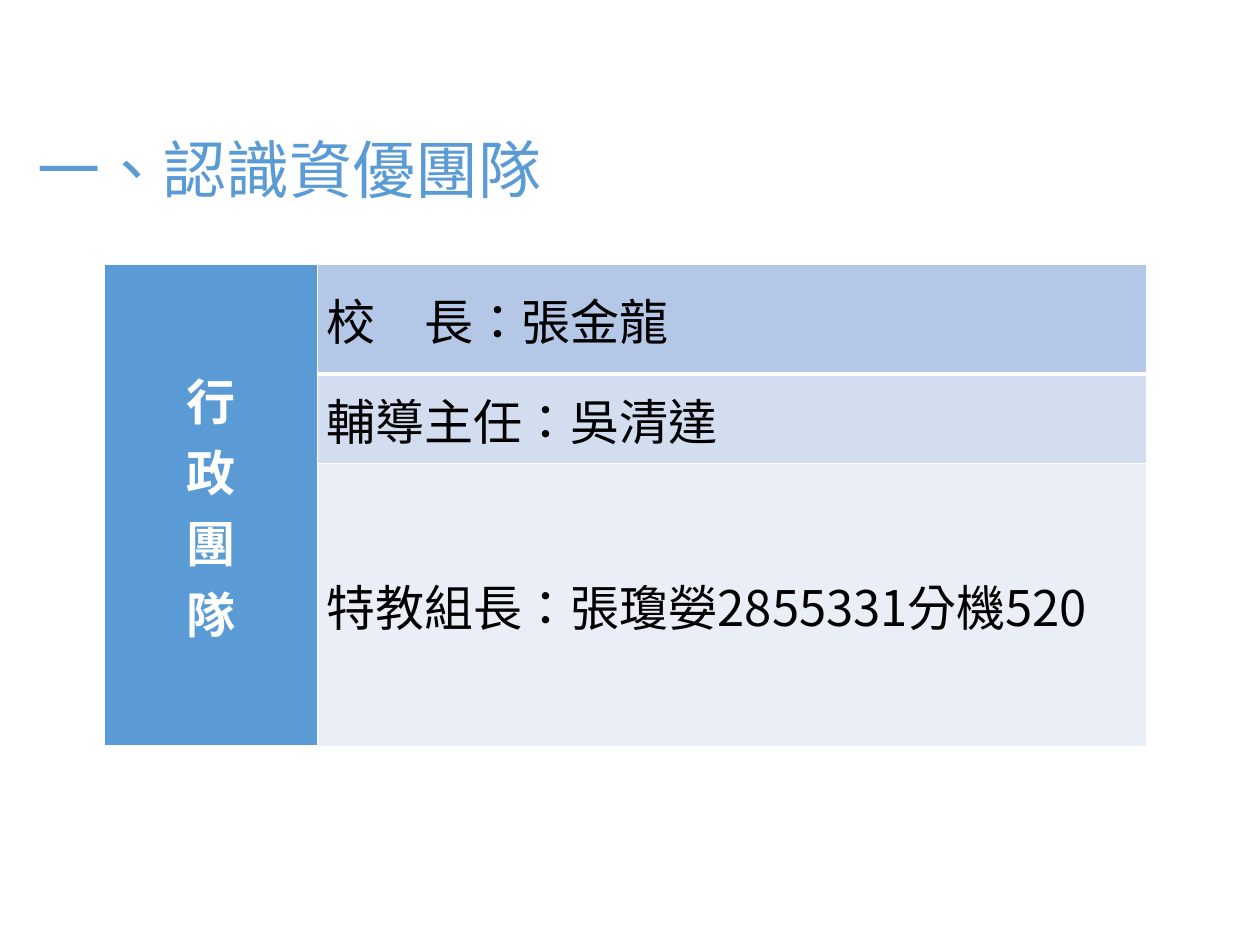
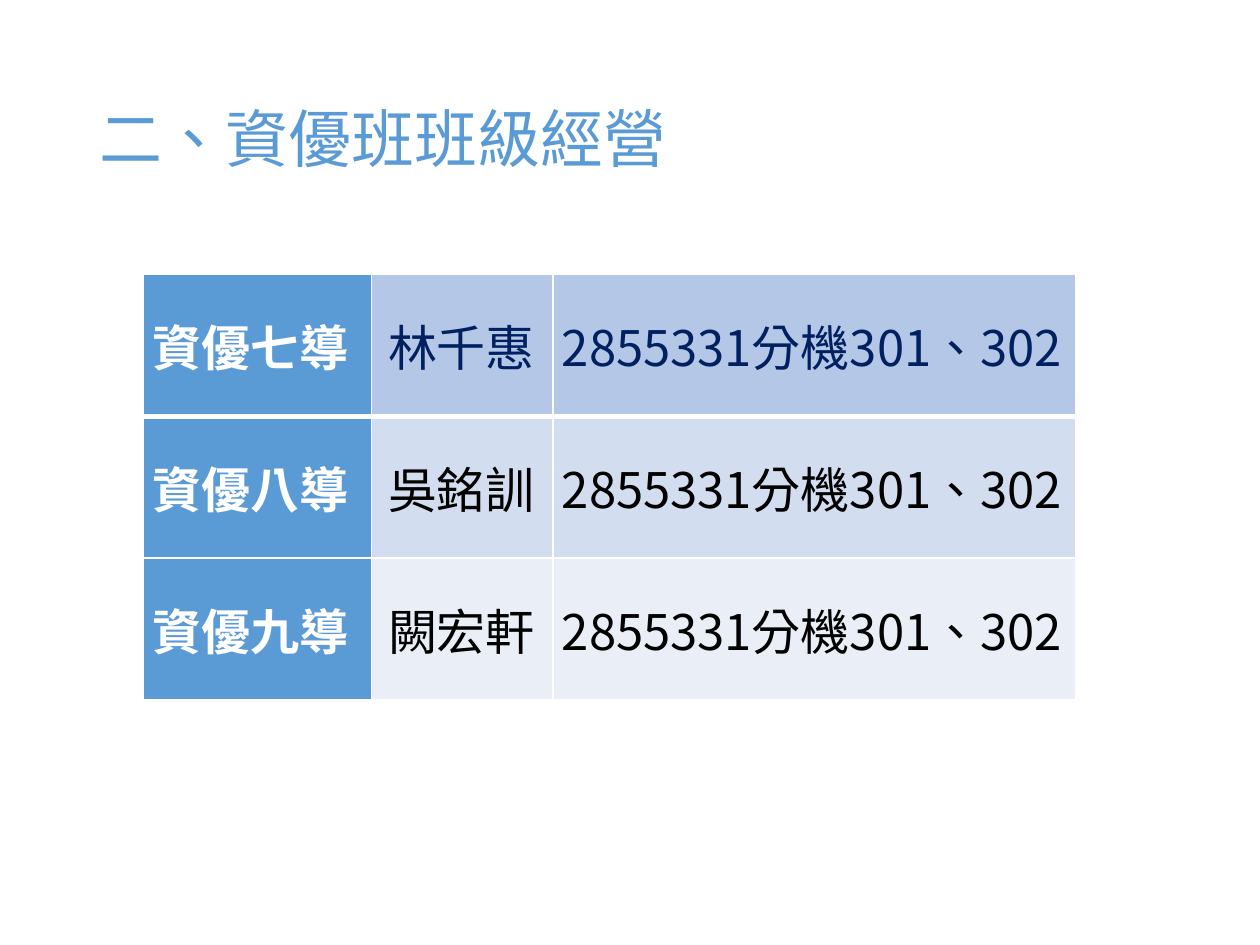
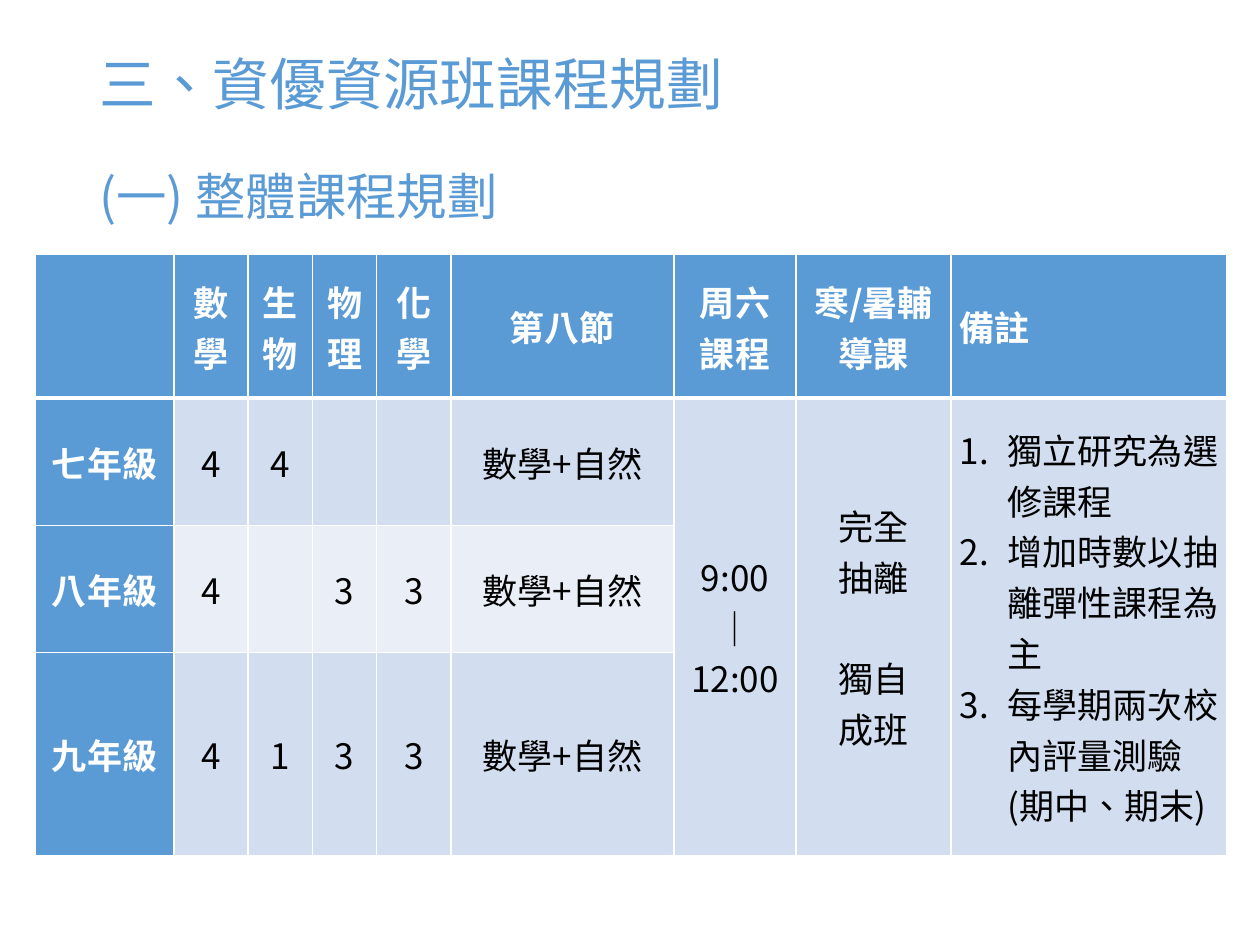
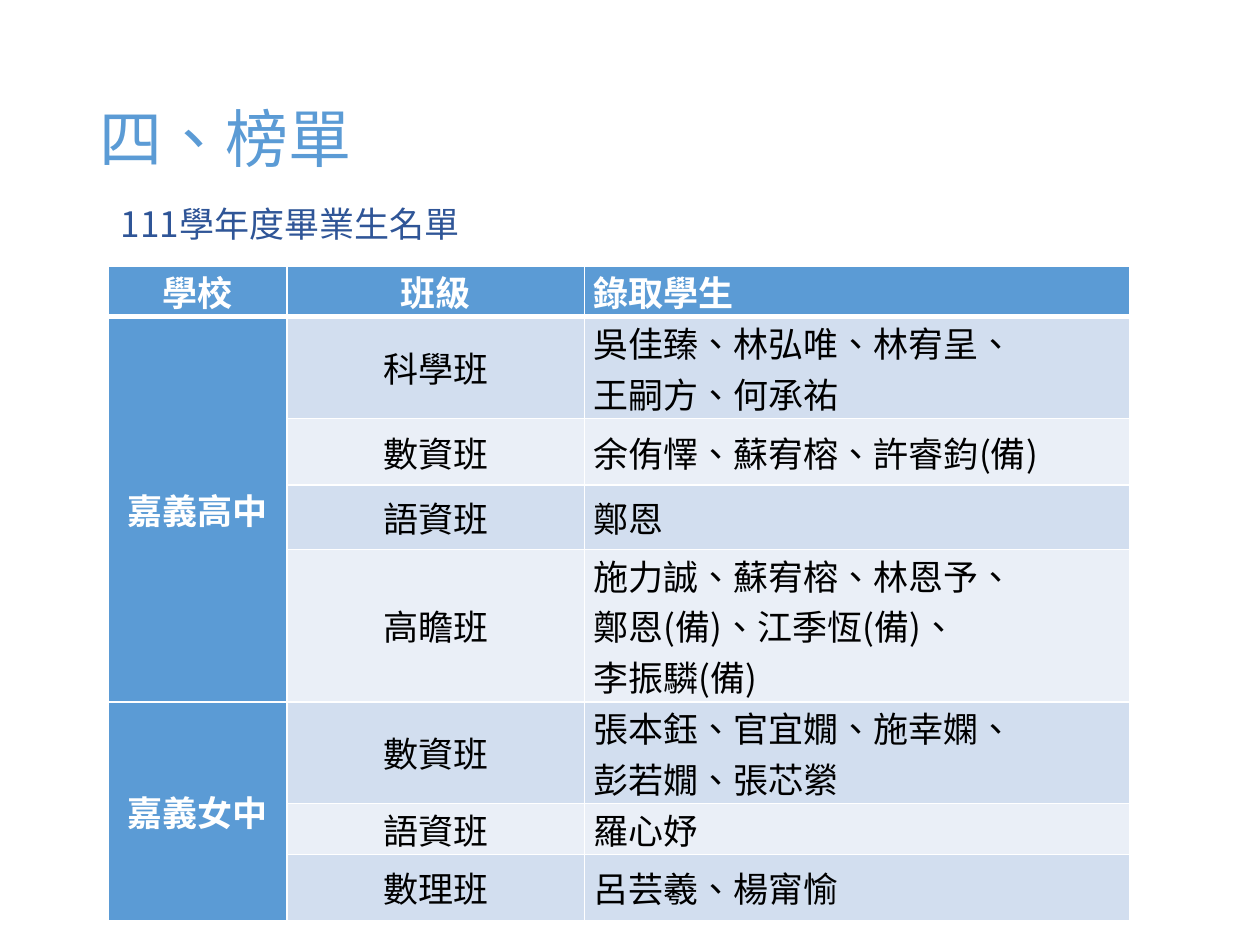
from dataclasses import dataclass
from typing import Optional

import pptx
import pptx.dml.color
import pptx.enum.text
import pptx.oxml.ns
import pptx.util
from lxml import etree
from pptx.util import Inches

FONT = "Noto Sans CJK SC"
BLUE, WHITE, BLACK = "5B9BD5", "FFFFFF", "000000"
TOP_BAND, ODD_BAND, EVEN_BAND = "B4C7E7", "D2DEEF", "EAEFF7"
NAVY, CAPTION_BLUE = "002060", "2F5597"
LEFT = pptx.enum.text.PP_ALIGN.LEFT
CENTER = pptx.enum.text.PP_ALIGN.CENTER
MIDDLE = pptx.enum.text.MSO_ANCHOR.MIDDLE
Box = tuple[float, float, float, float]
TITLE_BOX: Box = (0.69, 0.4, 8.62, 1.45)


@dataclass
class Column:
    width: float
    align: int = CENTER
    indent: float = 0
    numbered: bool = False


@dataclass
class Grid:
    """A table; None in a row continues the cell above it."""
    left: float
    top: float
    columns: list[Column]
    heights: list[float]
    rows: list[list[Optional[str]]]
    size: float
    header_row: bool = True
    top_color: str = BLACK


@dataclass
class Page:
    title: str
    grid: Grid
    title_box: Box = TITLE_BOX
    title_size: float = 36
    subtitle_size: Optional[float] = None
    caption: Optional[str] = None


def rgb(color: str) -> pptx.dml.color.RGBColor:
    return pptx.dml.color.RGBColor.from_string(color)


def add_xml(parent, tag: str, **attributes: str):
    return etree.SubElement(parent, pptx.oxml.ns.qn(tag), attributes)


def write(frame, text: str, *, size: float, color: str, bold: bool = False,
          align: int = LEFT, spacing: Optional[float] = None, gap: float = 0,
          later_size: Optional[float] = None, numbered: bool = False) -> None:
    """One paragraph per line; a blank line starts a block set off by gap points."""
    paragraph = None
    for block_index, block in enumerate(text.split("\n\n")):
        for line_index, line in enumerate(block.split("\n")):
            paragraph = frame.add_paragraph() if paragraph else frame.paragraphs[0]
            paragraph.alignment = align
            paragraph.space_before = pptx.util.Pt(
                gap if block_index and not line_index else 0)
            if spacing:
                paragraph.line_spacing = spacing
            if numbered:
                properties = paragraph._p.get_or_add_pPr()
                properties.set("marL", str(Inches(0.38)))
                properties.set("indent", str(-Inches(0.38)))
                add_xml(properties, "a:buFont", typeface="+mj-lt")
                add_xml(properties, "a:buAutoNum", type="arabicPeriod")
            run = paragraph.add_run()
            run.text = line
            font = run.font
            font.size = pptx.util.Pt(later_size if block_index and later_size else size)
            font.bold = bold
            font.color.rgb = rgb(color)
            font.name = FONT
            run_properties = run._r.get_or_add_rPr()
            run_properties.set("lang", "zh-TW")
            add_xml(run_properties, "a:ea", typeface=FONT)


def set_borders(cell, bottom: float) -> None:
    properties = cell._tc.get_or_add_tcPr()
    for side, width in (("L", 1), ("R", 1), ("T", 1), ("B", bottom)):
        line = add_xml(properties, f"a:ln{side}", w=str(pptx.util.Pt(width)))
        add_xml(add_xml(line, "a:solidFill"), "a:srgbClr", val=WHITE)


def merge_down(table, rows: list[list[Optional[str]]]) -> None:
    for column in range(len(rows[0])):
        for start, row in enumerate(rows):
            end = start
            while end + 1 < len(rows) and rows[end + 1][column] is None:
                end += 1
            if row[column] is not None and end > start:
                table.cell(start, column).merge(table.cell(end, column))


def add_grid(slide, grid: Grid) -> None:
    table = slide.shapes.add_table(
        len(grid.rows), len(grid.columns), Inches(grid.left), Inches(grid.top),
        Inches(sum(column.width for column in grid.columns)),
        Inches(sum(grid.heights))).table
    table.first_row = table.horz_banding = False
    for table_column, column in zip(table.columns, grid.columns):
        table_column.width = Inches(column.width)
    for table_row, height in zip(table.rows, grid.heights):
        table_row.height = Inches(height)

    for r, row in enumerate(grid.rows):
        band = ODD_BAND if r % 2 else EVEN_BAND if r else TOP_BAND
        for c, (text, column) in enumerate(zip(row, grid.columns)):
            heading = c == 0 or (r == 0 and grid.header_row)
            cell = table.cell(r, c)
            set_borders(cell, bottom=1 if r else 3)
            cell.fill.solid()
            cell.fill.fore_color.rgb = rgb(BLUE if heading else band)
            cell.vertical_anchor = MIDDLE
            cell.margin_left = Inches(0.07 + column.indent)
            cell.margin_right = Inches(0.07)
            cell.margin_top = cell.margin_bottom = 0
            if text:
                body_color = BLACK if r else grid.top_color
                write(cell.text_frame, text, size=grid.size, bold=heading,
                      color=WHITE if heading else body_color, align=column.align,
                      gap=29, numbered=column.numbered and not heading)
    merge_down(table, grid.rows)


def place(shape, box: Box) -> None:
    shape.left, shape.top, shape.width, shape.height = map(Inches, box)
    frame = shape.text_frame
    frame.word_wrap = True
    frame.auto_size = pptx.enum.text.MSO_AUTO_SIZE.NONE
    frame.vertical_anchor = MIDDLE


def add_page(presentation, page: Page) -> None:
    slide = presentation.slides.add_slide(presentation.slide_layouts[5])
    title = slide.shapes.title
    place(title, page.title_box)
    write(title.text_frame, page.title, size=page.title_size, color=BLUE,
          spacing=0.9, gap=31, later_size=page.subtitle_size)
    add_grid(slide, page.grid)
    if page.caption:
        caption_box = (0.86, 1.55, 5.98, 0.44)
        caption = slide.shapes.add_textbox(*map(Inches, caption_box))
        place(caption, caption_box)
        write(caption.text_frame, page.caption, size=20, color=CAPTION_BLUE)


EXTENSION = "2855331分機301、302"
EIGHTH_PERIOD = "數學+自然"

TEAM = Grid(
    0.83, 2.1, [Column(1.69), Column(6.58, LEFT)], [0.87, 0.71, 0.79],
    [["行\n政\n團\n隊", "校　長：張金龍"],
     [None, "輔導主任：吳清達"],
     [None, "特教組長：張瓊嫈2855331分機520"]],
    size=28, header_row=False)

TUTORS = Grid(
    1.14, 2.18, [Column(1.81, LEFT), Column(1.44, LEFT, indent=0.06), Column(4.15, LEFT)],
    [1, 1, 1],
    [["資優七導", "林千惠", EXTENSION],
     ["資優八導", "吳銘訓", EXTENSION],
     ["資優九導", "闕宏軒", EXTENSION]],
    size=28, header_row=False, top_color=NAVY)

COURSES = Grid(
    0.28, 2.02,
    [*map(Column, (1.1, 0.59, 0.51, 0.51, 0.59, 1.77, 0.97, 1.23)),
     Column(2.19, LEFT, numbered=True)],
    [1.14, 1.01, 1.01, 1.33],
    [["", "數學", "生物", "物理", "化學", "第八節", "周六課程", "寒/暑輔導課", "備註"],
     ["七年級", "4", "4", "", "", EIGHTH_PERIOD, "9:00\n｜\n12:00",
      "完全\n抽離\n\n獨自\n成班",
      "獨立研究為選修課程\n增加時數以抽離彈性課程為主\n每學期兩次校內評量測驗(期中、期末)"],
     ["八年級", "4", "", "3", "3", EIGHTH_PERIOD, None, None, None],
     ["九年級", "4", "1", "3", "3", EIGHTH_PERIOD, None, None, None]],
    size=20)

HONOURS = Grid(
    0.86, 2.11, [Column(1.42), Column(2.36), Column(4.33, LEFT)],
    [0.37, 0.74, 0.53, 0.51, 0.74, 0.74, 0.37, 0.53],
    [["學校", "班級", "錄取學生"],
     ["嘉義高中", "科學班", "吳佳臻、林弘唯、林宥呈、\n王嗣方、何承祐"],
     [None, "數資班", "余侑懌、蘇宥榕、許睿鈞(備)"],
     [None, "語資班", "鄭恩"],
     [None, "高瞻班", "施力誠、蘇宥榕、林恩予、\n鄭恩(備)、江季恆(備)、\n李振驎(備)"],
     ["嘉義女中", "數資班", "張本鈺、官宜嫺、施幸嫻、\n彭若嫺、張芯縈"],
     [None, "語資班", "羅心妤"],
     [None, "數理班", "呂芸羲、楊甯愉"]],
    size=20)

PAGES = [
    Page("一、認識資優團隊", TEAM, title_box=(0.2, 1, 9.61, 0.74)),
    Page("二、資優班班級經營", TUTORS),
    Page("三、資優資源班課程規劃\n\n(一) 整體課程規劃", COURSES,
         title_size=32.4, subtitle_size=28.8),
    Page("四、榜單", HONOURS, caption="111學年度畢業生名單"),
]


def main() -> None:
    presentation = pptx.Presentation()
    presentation.slide_width = Inches(10)
    presentation.slide_height = Inches(7.5)
    for page in PAGES:
        add_page(presentation, page)
    presentation.save("out.pptx")


if __name__ == "__main__":
    main()
